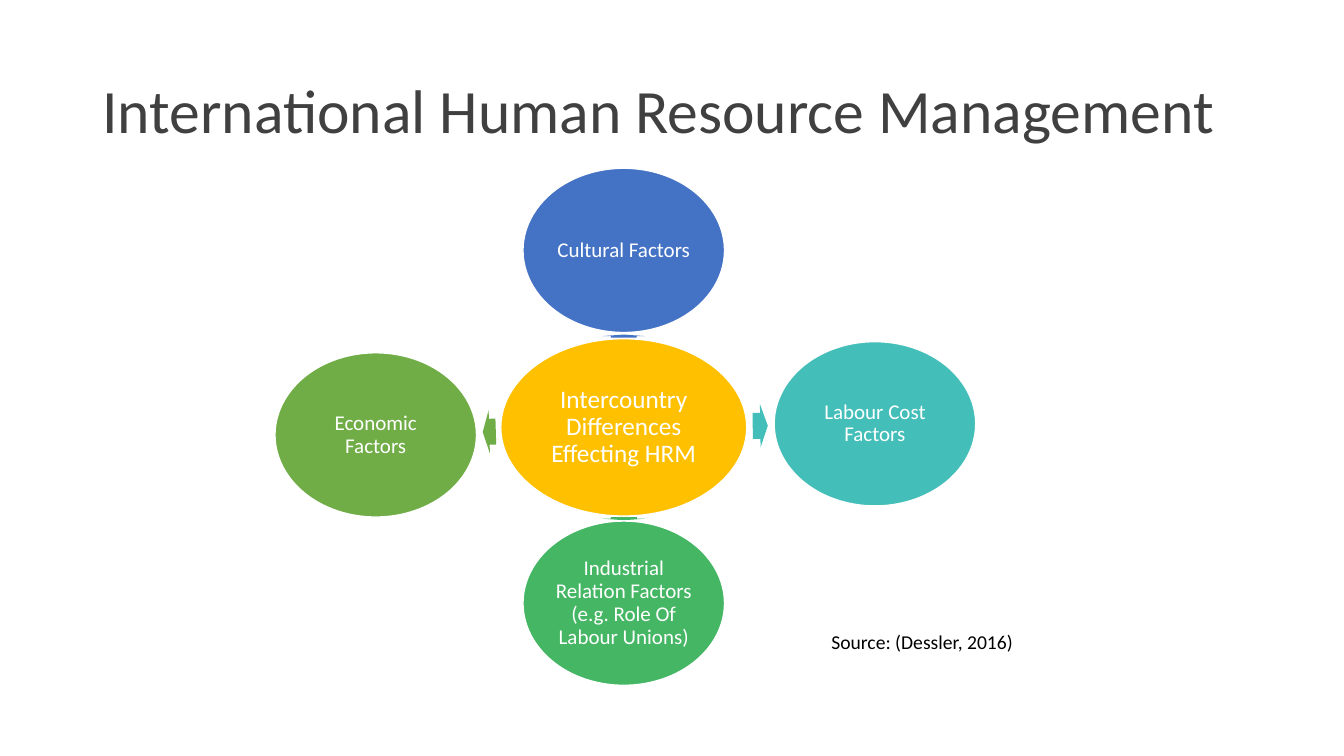
from pptx import Presentation
from pptx.dml.color import RGBColor
from pptx.enum.shapes import MSO_SHAPE
from pptx.enum.text import MSO_ANCHOR, MSO_AUTO_SIZE, PP_ALIGN
from pptx.util import Cm, Pt

ELLIPSE, ARROW = MSO_SHAPE.OVAL, MSO_SHAPE.RIGHT_ARROW
LEFT, CENTER = PP_ALIGN.LEFT, PP_ALIGN.CENTER
TOP, MIDDLE = MSO_ANCHOR.TOP, MSO_ANCHOR.MIDDLE
NO_FIT = MSO_AUTO_SIZE.NONE
TITLE_ONLY = 5

WHITE, BLACK, GREY = "FFFFFF", "000000", "404041"
GOLD, BLUE, TEAL, GREEN, OLIVE = "FFC000", "4472C4", "43BEB9", "45B664", "70AD47"


def color(value):
    return RGBColor.from_string(value)


class Page:
    font = "Calibri"
    line_spacing = 0.9
    arrow_height = 1.09

    def __init__(self, deck):
        self.slide = deck.slides.add_slide(deck.slide_layouts[TITLE_ONLY])

    def set_text(self, box, text, size, ink, align, anchor, inset=None):
        frame = box.text_frame
        frame.word_wrap = True
        frame.auto_size = NO_FIT
        frame.vertical_anchor = anchor
        if inset is not None:
            frame.margin_left = frame.margin_right = Cm(inset)
            frame.margin_top = frame.margin_bottom = Cm(inset)
        para = frame.paragraphs[0]
        para.text = text
        para.alignment = align
        para.line_spacing = self.line_spacing
        para.font.name = self.font
        para.font.size = Pt(size)
        para.font.color.rgb = color(ink)

    def title(self, text, left, top, width, height):
        box = self.slide.shapes.title
        box.left, box.top, box.width, box.height = map(Cm, (left, top, width, height))
        self.set_text(box, text, 44, GREY, LEFT, MIDDLE)

    def centered_shape(self, kind, center, size, fill):
        """Add a flat filled shape around its centre point."""
        (x, y), (width, height) = center, size
        shape = self.slide.shapes.add_shape(
            kind, Cm(x - width / 2), Cm(y - height / 2), Cm(width), Cm(height))
        shape.shadow.inherit = False
        shape.fill.solid()
        shape.fill.fore_color.rgb = color(fill)
        return shape

    def bubble(self, text, center, size, fill, points):
        shape = self.centered_shape(ELLIPSE, center, size, fill)
        shape.line.color.rgb = color(WHITE)
        shape.line.width = Pt(1)
        self.set_text(shape, text, points, WHITE, CENTER, MIDDLE, inset=0.05)

    def arrow(self, center, length, angle, fill):
        shape = self.centered_shape(ARROW, center, (length, self.arrow_height), fill)
        shape.adjustments[0] = 0.6
        shape.adjustments[1] = 0.5
        shape.rotation = angle
        shape.line.fill.background()

    def note(self, text, left, top, width, height):
        box = self.slide.shapes.add_textbox(Cm(left), Cm(top), Cm(width), Cm(height))
        self.set_text(box, text, 14, BLACK, LEFT, TOP)
        box.text_frame.paragraphs[0].line_spacing = 1.0


def main():
    deck = Presentation()
    deck.slide_width, deck.slide_height = Cm(33.87), Cm(19.05)
    page = Page(deck)

    page.title("International Human Resource Management", 2.33, 1.01, 29.21, 3.68)

    # Hub of the radial diagram
    middle = 15.72
    page.bubble("Intercountry Differences Effecting HRM",
                (middle, 10.77), (6.2, 4.47), GOLD, 18)

    # Factors: text, centre, fill, then arrow centre, length and angle
    factors = [
        ("Cultural Factors", (middle, 6.31), BLUE, (middle, 8.47), 0.08, 270),
        ("Labour Cost Factors", (22.05, 10.68), TEAL, (19.16, 10.73), 0.38, 359.2),
        ("Industrial Relation Factors (e.g. Role Of Labour Unions)",
         (middle, 15.2), GREEN, (middle, 13.07), 0.08, 90),
        ("Economic Factors", (9.47, 10.96), OLIVE, (12.33, 10.88), 0.33, 178.3),
    ]
    for text, center, fill, arrow_center, length, angle in factors:
        page.arrow(arrow_center, length, angle, fill)
        page.bubble(text, center, (5.08, 4.14), fill, 15)

    # Citation
    page.note("Source: (Dessler, 2016)", 20.7, 15.75, 7.24, 0.86)

    deck.save("out.pptx")


if __name__ == "__main__":
    main()
